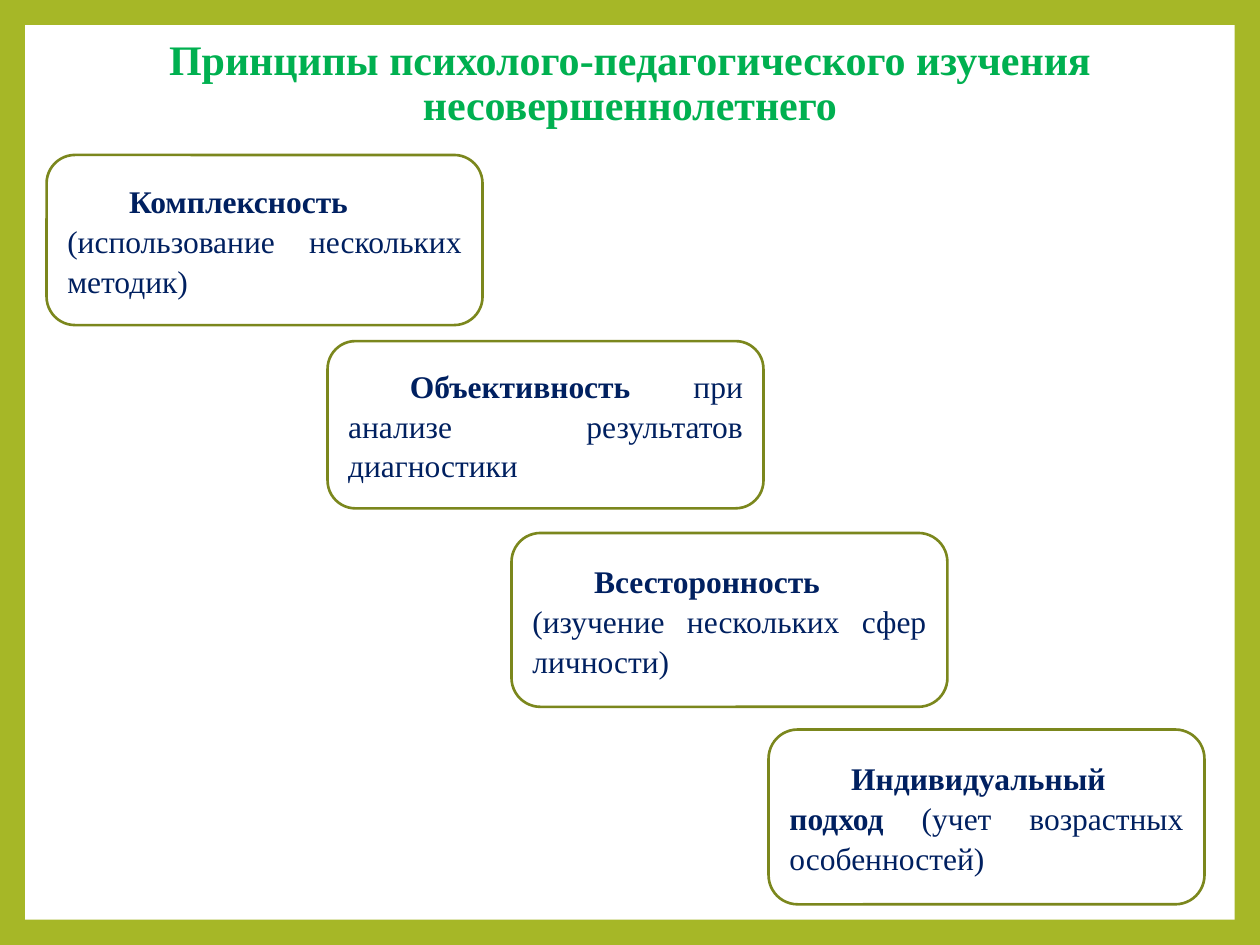
import pptx
import pptx.dml.color
import pptx.enum.shapes
import pptx.enum.text
import pptx.util

RGB = pptx.dml.color.RGBColor
LIME = RGB(0xA6, 0xB7, 0x27)
OLIVE = RGB(0x7B, 0x87, 0x1D)
GREEN = RGB(0x00, 0xB0, 0x50)
NAVY = RGB(0x00, 0x20, 0x60)
WHITE = RGB(0xFF, 0xFF, 0xFF)

SHAPES = pptx.enum.shapes.MSO_SHAPE
ALIGN = pptx.enum.text.PP_ALIGN
ANCHOR = pptx.enum.text.MSO_ANCHOR
Pt = pptx.util.Pt

TITLE = "Принципы психолого-педагогического изучения несовершеннолетнего"
CARD_WIDTH = 0.346
# left and top, height (shares of the slide), space before, bold text, plain text
PRINCIPLES = [
    (0.037, 0.164, 0.18, 5, "Комплексность", " (использование нескольких методик)"),
    (0.26, 0.361, 0.177, 5, "Объективность", " при анализе результатов диагностики"),
    (0.406, 0.564, 0.184, 5, "Всесторонность ", "(изучение нескольких сфер личности)"),
    (0.61, 0.772, 0.185, 0, "Индивидуальный подход ", "(учет возрастных особенностей)"),
]


def apply(target, values):
    for name, value in values.items():
        setattr(target, name, value)


class Painter:
    """Holds the style and the current slide; places are shares of its size."""

    font = {"name": "Times New Roman"}

    def __init__(self, deck):
        self.deck = deck
        self.slide = deck.slides.add_slide(deck.slide_layouts[6])

    def place(self, left, top, width, height):
        across, down = self.deck.slide_width, self.deck.slide_height
        return [int(share * size) for share, size in
                zip((left, top, width, height), (across, down, across, down))]

    def background(self, color):
        fill = self.slide.background.fill
        fill.solid()
        fill.fore_color.rgb = color

    def shape(self, kind, *area):
        shape = self.slide.shapes.add_shape(kind, *self.place(*area))
        shape.shadow.inherit = False
        return shape

    def panel(self, color, *area):
        panel = self.shape(SHAPES.RECTANGLE, *area)
        panel.fill.solid()
        panel.fill.fore_color.rgb = color
        panel.line.fill.background()

    def add_span(self, para, text, size, color, bold):
        span = para.add_run()
        span.text = text
        apply(span.font, {**self.font, "size": Pt(size), "bold": bold})
        span.font.color.rgb = color

    def title(self, text, *area):
        box = self.slide.shapes.add_textbox(*self.place(*area))
        apply(box.text_frame, {"word_wrap": True, "margin_top": 0,
                               "vertical_anchor": ANCHOR.TOP})
        para = box.text_frame.paragraphs[0]
        apply(para, {"alignment": ALIGN.CENTER, "line_spacing": 0.9})
        self.add_span(para, text, 24, GREEN, True)

    def card(self, left, top, height, space, name, detail):
        card = self.shape(SHAPES.ROUNDED_RECTANGLE, left, top, CARD_WIDTH, height)
        card.fill.background()
        card.line.color.rgb = OLIVE
        card.line.width = Pt(1.5)
        apply(card.text_frame, {"word_wrap": True, "vertical_anchor": ANCHOR.MIDDLE})
        para = card.text_frame.paragraphs[0]
        apply(para, {"alignment": ALIGN.JUSTIFY, "line_spacing": 1.05,
                     "space_before": Pt(space)})
        para._p.get_or_add_pPr().set("indent", str(pptx.util.Inches(0.49)))
        self.add_span(para, name, 18, NAVY, True)
        self.add_span(para, detail, 18, NAVY, False)


def main():
    deck = pptx.Presentation()
    apply(deck, {"slide_width": pptx.util.Inches(10),
                 "slide_height": pptx.util.Inches(7.5)})
    painter = Painter(deck)
    painter.background(LIME)
    painter.panel(WHITE, 0.02, 0.2 / 7.5, 0.96, 7.1 / 7.5)
    painter.title(TITLE, 0.095, 0.31 / 7.5, 0.81, 1.1 / 7.5)
    for principle in PRINCIPLES:
        painter.card(*principle)
    deck.save("out.pptx")


if __name__ == "__main__":
    main()
